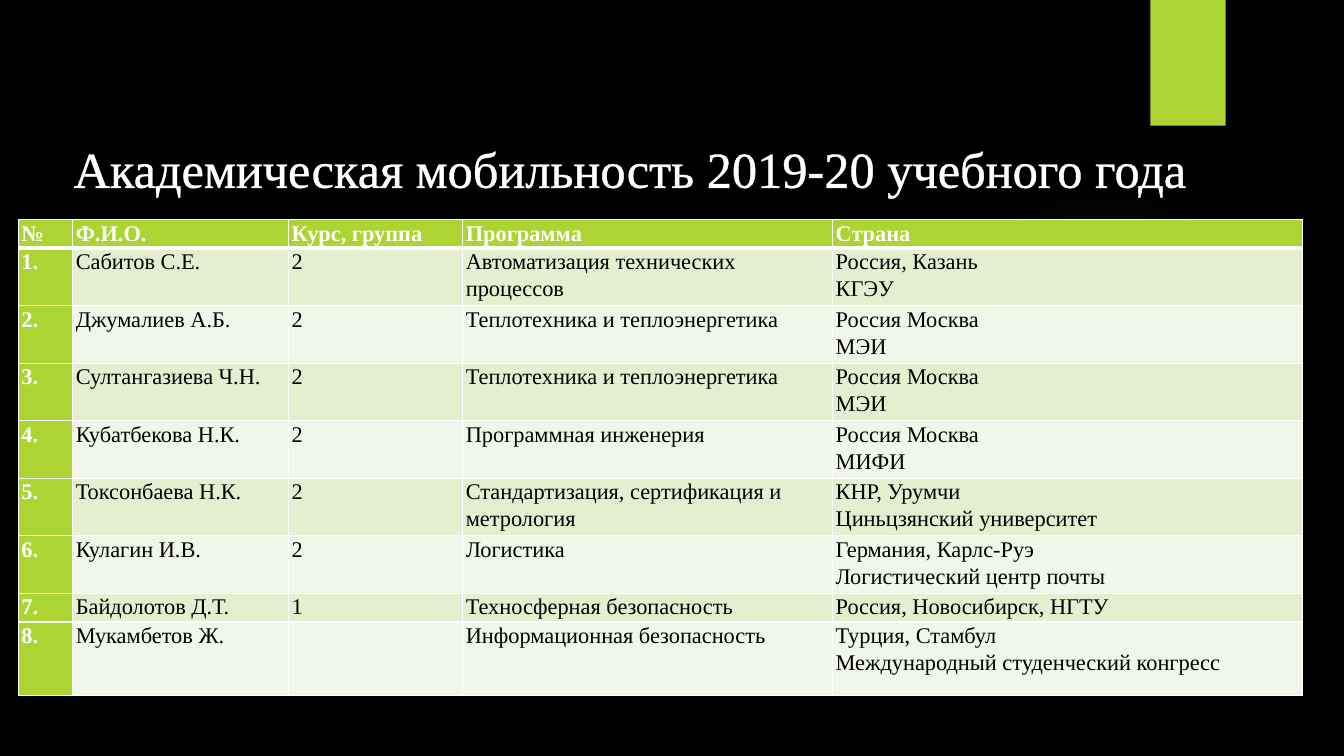
from lxml.etree import SubElement
from pptx import Presentation
from pptx.dml.color import RGBColor
from pptx.enum.shapes import MSO_SHAPE
from pptx.enum.text import MSO_ANCHOR, MSO_AUTO_SIZE, PP_ALIGN
from pptx.oxml import parse_xml
from pptx.oxml.ns import nsdecls, qn
from pptx.util import Cm, Pt

TITLE = "Академическая мобильность 2019-20 учебного года"
HEADER = ("№", "Ф.И.О.", "Курс, группа", "Программа", "Страна")
STUDENTS = [
    ("Сабитов С.Е.", "2", "Автоматизация технических процессов", "Россия, Казань\nКГЭУ"),
    ("Джумалиев А.Б.", "2", "Теплотехника и теплоэнергетика", "Россия Москва\nМЭИ"),
    ("Султангазиева Ч.Н.", "2", "Теплотехника и теплоэнергетика", "Россия Москва\nМЭИ"),
    ("Кубатбекова Н.К.", "2", "Программная инженерия", "Россия Москва\nМИФИ"),
    ("Токсонбаева Н.К.", "2", "Стандартизация, сертификация и метрология",
     "КНР, Урумчи\nЦиньцзянский университет"),
    ("Кулагин И.В.", "2", "Логистика", "Германия, Карлс-Руэ\nЛогистический центр почты"),
    ("Байдолотов Д.Т.", "1", "Техносферная безопасность", "Россия, Новосибирск, НГТУ"),
    ("Мукамбетов Ж.", "", "Информационная безопасность",
     "Турция, Стамбул\nМеждународный студенческий конгресс"),
]
COLUMN_WIDTHS = (1.37, 5.44, 4.39, 9.32, 11.84)
LINE_HEIGHT, LAST_ROW_HEIGHT = 0.67, 1.85
FONT = "Times New Roman"
LINE_SPACING = 1.07
GLOW_STOPS = ((0, 7), (36, 6), (69, 0))

BLACK = RGBColor(0x00, 0x00, 0x00)
WHITE = RGBColor(0xFF, 0xFF, 0xFF)
LIME = RGBColor(0xAC, 0xD4, 0x33)
BAND_DARK = RGBColor(0xE3, 0xEF, 0xCE)
BAND_LIGHT = RGBColor(0xF1, 0xF7, 0xE8)
GLOW = RGBColor(0x7A, 0xC4, 0xF0)


def format_para(para, size, color, bold=False):
    para.line_spacing = LINE_SPACING
    para.font.name = FONT
    para.font.size = Pt(size)
    para.font.bold = bold
    para.font.color.rgb = color


def white_line(tag, points):
    return parse_xml(
        f'<a:{tag} {nsdecls("a")} w="{Pt(points)}"><a:solidFill>'
        f'<a:srgbClr val="{WHITE}"/></a:solidFill></a:{tag}>')


def add_plain_shape(page, kind, left, top, width, height):
    shape = page.shapes.add_shape(kind, Cm(left), Cm(top), Cm(width), Cm(height))
    shape.shadow.inherit = False
    shape.line.fill.background()
    return shape


def add_glow(page):
    """Faint radial light behind the table."""
    glow = add_plain_shape(page, MSO_SHAPE.OVAL, 23.9, 4.65, 7.82, 7.82)
    stops = "".join(
        f'<a:gs pos="{position * 1000}"><a:srgbClr val="{GLOW}">'
        f'<a:alpha val="{alpha * 1000}"/></a:srgbClr></a:gs>'
        for position, alpha in GLOW_STOPS)
    gradient = parse_xml(
        f'<a:gradFill {nsdecls("a")}><a:gsLst>{stops}</a:gsLst><a:path path="circle">'
        '<a:fillToRect l="50000" t="50000" r="50000" b="50000"/></a:path></a:gradFill>')
    glow.element.spPr.find(qn("a:prstGeom")).addnext(gradient)


def add_title(page):
    title = page.shapes.title
    title.left, title.top, title.width, title.height = Cm(1.14), Cm(3.23), Cm(29.49), Cm(1.9)
    frame = title.text_frame
    frame.text = TITLE
    frame.word_wrap = True
    frame.auto_size = MSO_AUTO_SIZE.SHAPE_TO_FIT_TEXT
    frame.vertical_anchor = MSO_ANCHOR.TOP
    para = frame.paragraphs[0]
    para.alignment = PP_ALIGN.CENTER
    format_para(para, 36, WHITE)
    SubElement(para.runs[0].font._element, qn("a:ln"), w=str(Pt(1.45))).append(
        parse_xml(f'<a:solidFill {nsdecls("a")}><a:srgbClr val="{WHITE}"/></a:solidFill>'))


def format_cell(cell, text, row, column):
    is_heading = row == 0 or column == 0
    cell.fill.solid()
    cell.fill.fore_color.rgb = LIME if is_heading else BAND_DARK if row % 2 else BAND_LIGHT
    cell.margin_left = cell.margin_right = Cm(0.08)
    cell.margin_top = cell.margin_bottom = 0
    cell.text = text
    for para in cell.text_frame.paragraphs:
        format_para(para, 16, WHITE if is_heading else BLACK, is_heading)
    top = 3 if row == 1 else 1
    bottom = 3 if row == 0 else 1
    borders = (("lnL", 1), ("lnR", 1), ("lnT", top), ("lnB", bottom))
    for index, (tag, points) in enumerate(borders):
        cell._tc.get_or_add_tcPr().insert(index, white_line(tag, points))


def add_student_table(page):
    rows = [HEADER] + [(f"{number}.", *student) for number, student in enumerate(STUDENTS, 1)]
    heights = [LINE_HEIGHT * (2 if "\n" in row[-1] else 1) for row in rows]
    heights[-1] = LAST_ROW_HEIGHT
    table = page.shapes.add_table(
        len(rows), len(HEADER), Cm(0.46), Cm(5.53),
        Cm(sum(COLUMN_WIDTHS)), Cm(sum(heights))).table
    for column, width in zip(table.columns, COLUMN_WIDTHS):
        column.width = Cm(width)
    for row_index, (row, height) in enumerate(zip(rows, heights)):
        table.rows[row_index].height = Cm(height)
        for column_index, text in enumerate(row):
            format_cell(table.cell(row_index, column_index), text, row_index, column_index)


def main():
    deck = Presentation()
    deck.slide_width, deck.slide_height = Cm(33.87), Cm(19.05)
    page = deck.slides.add_slide(deck.slide_layouts[5])
    page.background.fill.solid()
    page.background.fill.fore_color.rgb = BLACK
    add_glow(page)
    bar = add_plain_shape(page, MSO_SHAPE.RECTANGLE, 28.99, 0, 1.9, 3.17)
    bar.fill.solid()
    bar.fill.fore_color.rgb = LIME
    add_title(page)
    add_student_table(page)
    deck.save("out.pptx")


if __name__ == "__main__":
    main()
